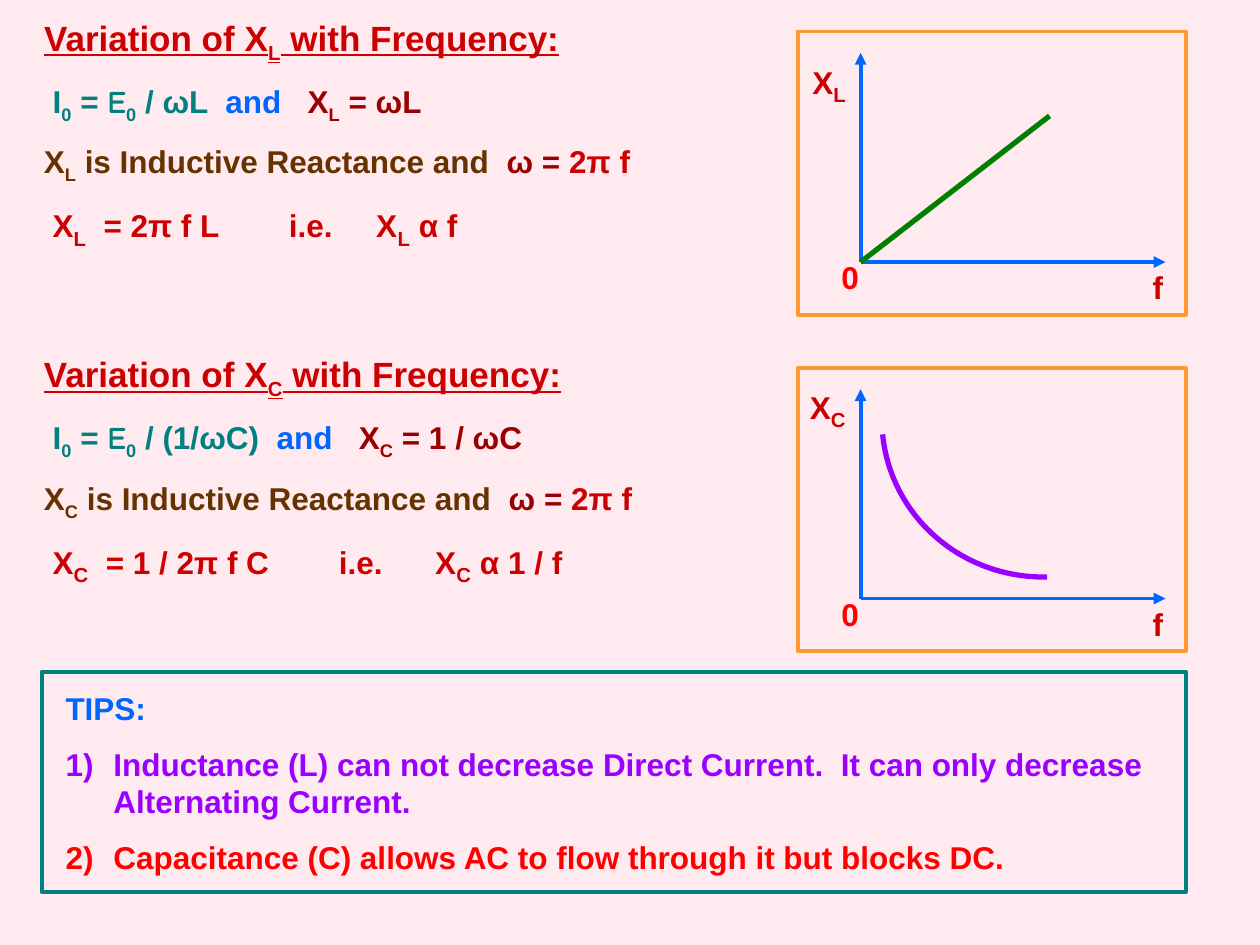
"""Build the slide on how inductive and capacitive reactance vary with frequency."""
from dataclasses import dataclass
from math import cos, radians, sin

from lxml import etree
from pptx import Presentation
from pptx.dml.color import RGBColor
from pptx.enum.dml import MSO_LINE
from pptx.enum.shapes import MSO_CONNECTOR, MSO_SHAPE
from pptx.enum.text import MSO_ANCHOR, MSO_AUTO_SIZE, PP_ALIGN
from pptx.oxml.ns import qn
from pptx.util import Inches, Pt

LEFT = PP_ALIGN.LEFT
TOP = MSO_ANCHOR.TOP
FIT = MSO_AUTO_SIZE.SHAPE_TO_FIT_TEXT
RECTANGLE = MSO_SHAPE.RECTANGLE
STRAIGHT = MSO_CONNECTOR.STRAIGHT
SOLID = MSO_LINE.SOLID

COLORS = {
    "background": "FFEBEF", "red": "CC0000", "bright_red": "FF0000", "teal": "008080",
    "blue": "0066FF", "maroon": "990000", "brown": "663300", "green": "008000",
    "orange": "FF9933", "purple": "9900FF",
}
FONT = "Arial"
ORIGIN_X = 6.83
SECTION_STEP = 2.67


@dataclass
class Span:
    text: str
    color: str
    size: int = 18
    sub: bool = False
    underline: bool = False
    font: str = FONT


@dataclass
class Section:
    symbol: str
    top: float
    ratio: str
    reactance: str
    expanded: str
    proportion: str
    label_left: float
    label_top: float


SECTIONS = [
    Section("L", 0, " / ωL ", " = ωL", "  = 2π f L        i.e.     X", " α f", 6.35, 0.42),
    Section("C", SECTION_STEP, " / (1/ωC) ", " = 1 / ωC",
            "  = 1 / 2π f C        i.e.      X", " α 1 / f", 6.33, 3),
]
TIPS = [
    Span("TIPS:", "blue"),
    Span("Inductance (L) can not decrease Direct Current.  It can only decrease "
         "Alternating Current.", "purple"),
    Span("Capacitance (C) allows AC to flow through it but blocks DC.", "bright_red"),
]


def rgb(name: str) -> RGBColor:
    return RGBColor.from_string(COLORS[name])


def write_text(box, lines: list, *, at: tuple, wrap: bool = True, gap: float = 0) -> None:
    box.left, box.top, box.width, box.height = (Inches(value) for value in at)
    frame = box.text_frame
    frame.word_wrap, frame.auto_size, frame.vertical_anchor = wrap, FIT, TOP
    for index, spans in enumerate(lines):
        para = frame.paragraphs[0] if index == 0 else frame.add_paragraph()
        para.alignment, para.space_before = LEFT, Pt(gap)
        for item in spans:
            span = para.add_run()
            span.text = item.text
            font = span.font
            font.name, font.size, font.bold = item.font, Pt(item.size), True
            font.underline = item.underline
            font.color.rgb = rgb(item.color)
            if item.sub:
                font._element.set("baseline", "-25000")


def add_text(page, lines: list, **layout) -> None:
    box = page.shapes.add_textbox(0, 0, 0, 0)
    write_text(box, lines, **layout)


def style_line(shape, color: str, width: float) -> None:
    shape.line.color.rgb = rgb(color)
    shape.line.width = Pt(width)
    shape.line.dash_style = SOLID


def add_frame(page, color: str, *, at: tuple) -> None:
    box = page.shapes.add_shape(RECTANGLE, *(Inches(value) for value in at))
    box.shadow.inherit = False
    box.fill.background()
    style_line(box, color, 2.25)


def add_line(page, start: tuple, end: tuple, color: str, *, width: float = 2.25,
             arrow: bool = False) -> None:
    line = page.shapes.add_connector(STRAIGHT, *(Inches(value) for value in start + end))
    style_line(line, color, width)
    if arrow:
        etree.SubElement(line.line._get_or_add_ln(), qn("a:tailEnd"), type="triangle")
    etree.SubElement(line._element.spPr, qn("a:effectLst"))


def add_decay_curve(page) -> None:
    center_x, center_y, radius_x, radius_y = 8.28, 3.33, 1.28, 1.25
    angles = [radians(88.6 + 86 * step / 40) for step in range(41)]
    points = [(Inches(center_x + radius_x * cos(angle)), Inches(center_y + radius_y * sin(angle)))
              for angle in angles]
    builder = page.shapes.build_freeform(*points[0])
    builder.add_line_segments(points[1:], close=False)
    curve = builder.convert_to_shape()
    curve.shadow.inherit = False
    curve.fill.background()
    style_line(curve, "purple", 3)


def add_equations(page, section: Section) -> None:
    symbol = section.symbol
    lines = [
        [Span(" I", "teal"), Span("0", "teal", sub=True), Span(" = ", "teal"),
         Span("E", "teal", font="Comic Neue"), Span("0", "teal", sub=True),
         Span(section.ratio, "teal"), Span(" and   ", "blue"), Span("X", "maroon"),
         Span(symbol, "maroon", sub=True), Span(section.reactance, "maroon")],
        [Span("X", "brown"), Span(symbol, "brown", sub=True),
         Span(" is Inductive Reactance and  ", "brown"), Span("ω = ", "maroon"),
         Span("2π f", "red")],
        [Span(" X", "red"), Span(symbol, "red", size=20, sub=True),
         Span(section.expanded, "red"), Span(symbol, "red", size=20, sub=True),
         Span(section.proportion, "red")],
    ]
    add_text(page, lines, at=(0.25, 0.6 + section.top, 5, 1.3), gap=10)


def add_graph(page, section: Section) -> None:
    top = section.top
    origin = (ORIGIN_X, 2.08 + top)
    add_frame(page, "orange", at=(6.33, 0.25 + top, 3.08, 2.25))
    add_line(page, origin, (ORIGIN_X, 0.42 + top), "blue", arrow=True)
    add_line(page, origin, (9.25, 2.08 + top), "blue", arrow=True)
    label = [Span("X", "red"), Span(section.symbol, "red", size=20, sub=True)]
    add_text(page, [label], at=(section.label_left, section.label_top, 0.5, 0.4), wrap=False)
    add_text(page, [[Span("f", "red")]], at=(9.05, 2.08 + top, 0.28, 0.4), wrap=False)
    add_text(page, [[Span("0", "bright_red")]], at=(6.58, 2 + top, 0.33, 0.4))


def add_tips(page) -> None:
    add_frame(page, "teal", at=(0.33, 5.33, 9.08, 1.75))
    body = page.placeholders[1]
    write_text(body, [[tip] for tip in TIPS], at=(0.42, 5.42, 9.08, 1.6), gap=10)
    for index, para in enumerate(body.text_frame.paragraphs):
        properties = para._p.get_or_add_pPr()
        properties.set("marL", str(Inches(0.38)))
        properties.set("indent", str(Inches(-0.38)))
        if index == 0:
            etree.SubElement(properties, qn("a:buNone"))
        else:
            etree.SubElement(properties, qn("a:buFont"), typeface=FONT)
            etree.SubElement(properties, qn("a:buAutoNum"), type="arabicParenR")


def main() -> None:
    deck = Presentation()
    deck.slide_width, deck.slide_height = Inches(10), Inches(7.5)
    page = deck.slides.add_slide(deck.slide_layouts[1])
    page.background.fill.solid()
    page.background.fill.fore_color.rgb = rgb("background")
    for section in SECTIONS:
        heading = [Span("Variation of X", "red", 20, underline=True),
                   Span(section.symbol, "red", 20, sub=True, underline=True),
                   Span(" with Frequency:", "red", 20, underline=True)]
        place = (0.25, 0.08 + section.top, 4.5, 0.43)
        if section is SECTIONS[0]:
            write_text(page.shapes.title, [heading], at=place)
        else:
            add_text(page, [heading], at=place)
        add_equations(page, section)
        add_graph(page, section)
    add_line(page, (ORIGIN_X, 2.08), (8.33, 0.92), "green", width=3)
    add_decay_curve(page)
    add_tips(page)
    deck.save("out.pptx")


if __name__ == "__main__":
    main()
